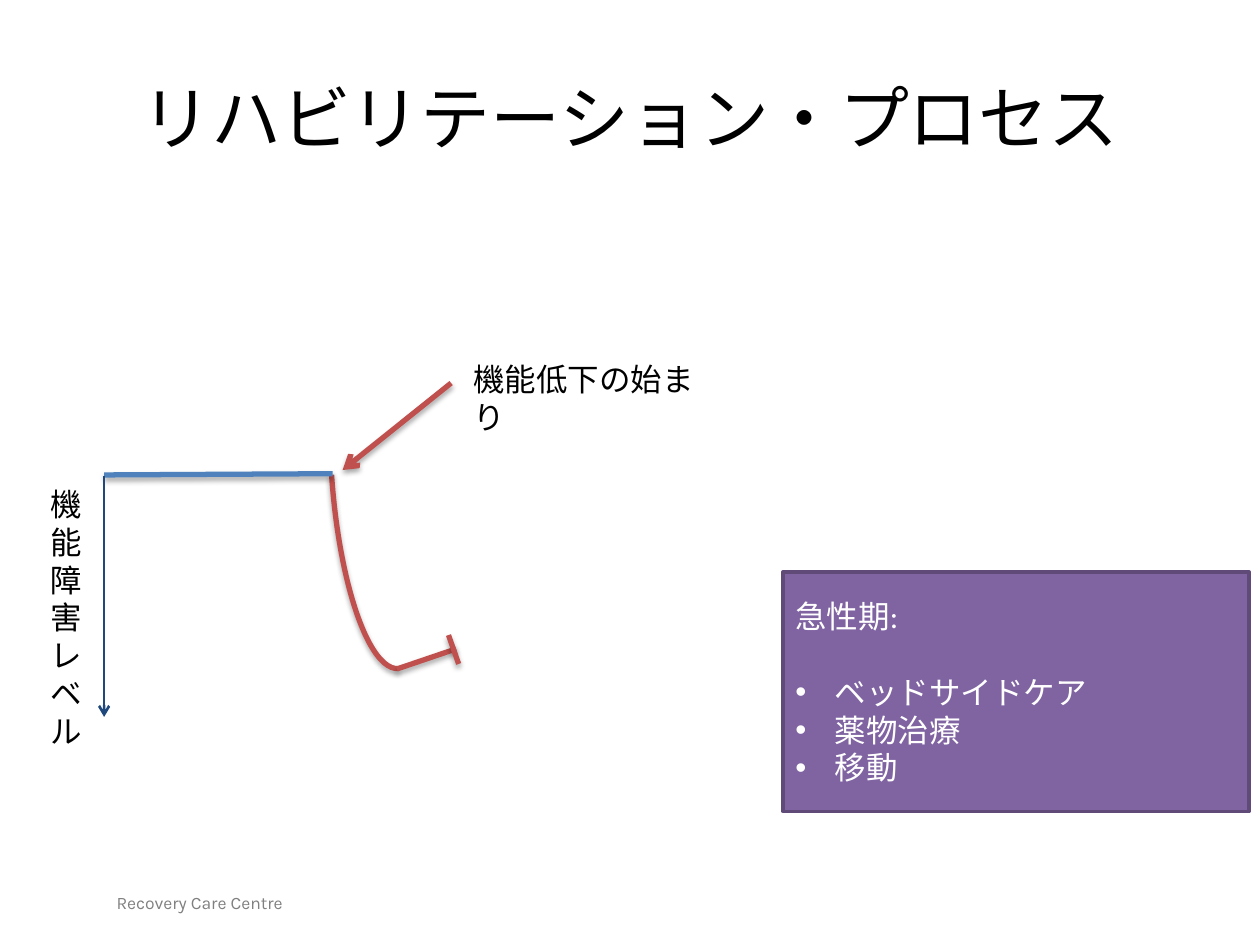
from lxml import etree
from pptx import Presentation
from pptx.dml.color import RGBColor
from pptx.enum.shapes import MSO_CONNECTOR, MSO_SHAPE
from pptx.enum.text import MSO_ANCHOR, PP_ALIGN
from pptx.oxml.ns import qn
from pptx.util import Pt

STRAIGHT = MSO_CONNECTOR.STRAIGHT
ARC, RECTANGLE = MSO_SHAPE.ARC, MSO_SHAPE.RECTANGLE
MIDDLE, TOP = MSO_ANCHOR.MIDDLE, MSO_ANCHOR.TOP
LEFT, CENTER = PP_ALIGN.LEFT, PP_ALIGN.CENTER

COLORS = {
    "decline": "C0504D",
    "baseline": "4F81BD",
    "axis": "1F497D",
    "phase": "8064A2",
    "phase_border": "5F4A78",
    "text": "000000",
    "footer": "808080",
    "white": "FFFFFF",
    "shadow": "000000",
}


def style_line(shape, color, width, shadow=True, arrow=False):
    shape.line.color.rgb = RGBColor.from_string(COLORS[color])
    shape.line.width = Pt(width)
    if arrow:
        line = shape.line._get_or_add_ln()
        etree.SubElement(line, qn("a:tailEnd"), type="arrow")
    effects = etree.SubElement(shape._element.spPr, qn("a:effectLst"))
    if shadow:
        outer = etree.SubElement(effects, qn("a:outerShdw"), blurRad=str(Pt(3.1)),
                                 dist=str(Pt(1.8)), dir="5400000", rotWithShape="0")
        tint = etree.SubElement(outer, qn("a:srgbClr"), val=COLORS["shadow"])
        etree.SubElement(tint, qn("a:alpha"), val="35000")


def format_text(paragraph, size, color, align=LEFT, font="Calibri"):
    paragraph.alignment = align
    for run in paragraph.runs:
        run.font.size = Pt(size)
        run.font.name = font
        run.font.color.rgb = RGBColor.from_string(COLORS[color])


prs = Presentation()
prs.slide_width, prs.slide_height = Pt(720), Pt(540)
slide = prs.slides.add_slide(prs.slide_layouts[5])
shapes = slide.shapes

title = shapes.title
title.left, title.top, title.width, title.height = Pt(36), Pt(21.6), Pt(648), Pt(90)
title.text_frame.text = "リハビリテーション・プロセス"
title.text_frame.vertical_anchor = MIDDLE
format_text(title.text_frame.paragraphs[0], 40, "text", CENTER)

labels = [
    ("Recovery Care Centre", (59.5, 506.2, 205.2, 19.4), 7.2, 10, "footer", LEFT, "Karla"),
    ("機能低下の始まり", (263.5, 202.3, 153.4, 29), 7.2, 18, "text", LEFT, "Calibri"),
    ("機能障害レベル", (23.3, 273.6, 28.8, 167), 3.6, 18, "text", CENTER, "Calibri"),
]
for wording, box, inset, size, color, align, font in labels:
    label = shapes.add_textbox(*map(Pt, box))
    frame = label.text_frame
    frame.word_wrap = True
    frame.vertical_anchor = TOP
    frame.margin_left = frame.margin_right = Pt(inset)
    frame.text = wording
    format_text(frame.paragraphs[0], size, color, align, font)

decline_curve = shapes.add_shape(ARC, Pt(189.4), Pt(156.2), Pt(61.2), Pt(226.1))
decline_curve.rotation = 176.1
decline_curve.fill.background()
style_line(decline_curve, "decline", 3)

segments = [
    ((257.8, 218.9), (195.8, 268.6), "decline", 3, True, True),
    ((226.8, 382.3), (260.6, 370.8), "decline", 3, True, False),
    ((256.3, 362.9), (262.1, 379.4), "decline", 3, True, False),
    ((59.5, 271.4), (190.1, 270.7), "baseline", 3, True, False),
    ((59.5, 272.2), (59.5, 409.7), "axis", 1.5, False, True),
]
for start, end, color, width, shadow, arrow in segments:
    segment = shapes.add_connector(STRAIGHT, *map(Pt, start + end))
    style_line(segment, color, width, shadow, arrow)

acute_phase = shapes.add_shape(RECTANGLE, Pt(447.5), Pt(326.9), Pt(266.4), Pt(136.8))
acute_phase.fill.solid()
acute_phase.fill.fore_color.rgb = RGBColor.from_string(COLORS["phase"])
style_line(acute_phase, "phase_border", 2, shadow=False)
frame = acute_phase.text_frame
frame.word_wrap = True
frame.vertical_anchor = MIDDLE
frame.text = "急性期:"
format_text(frame.paragraphs[0], 18, "white")
for index, care in enumerate(["ベッドサイドケア", "薬物治療", "移動"]):
    item = frame.add_paragraph()
    item.text = care
    properties = item._p.get_or_add_pPr()
    properties.set("marL", str(Pt(22.5)))
    properties.set("indent", str(Pt(-22.5)))
    etree.SubElement(properties, qn("a:buFont"), typeface="Arial")
    etree.SubElement(properties, qn("a:buChar"), char="•")
    if index == 0:
        item.space_before = Pt(21.6)
    format_text(item, 18, "white")

prs.save("out.pptx")
